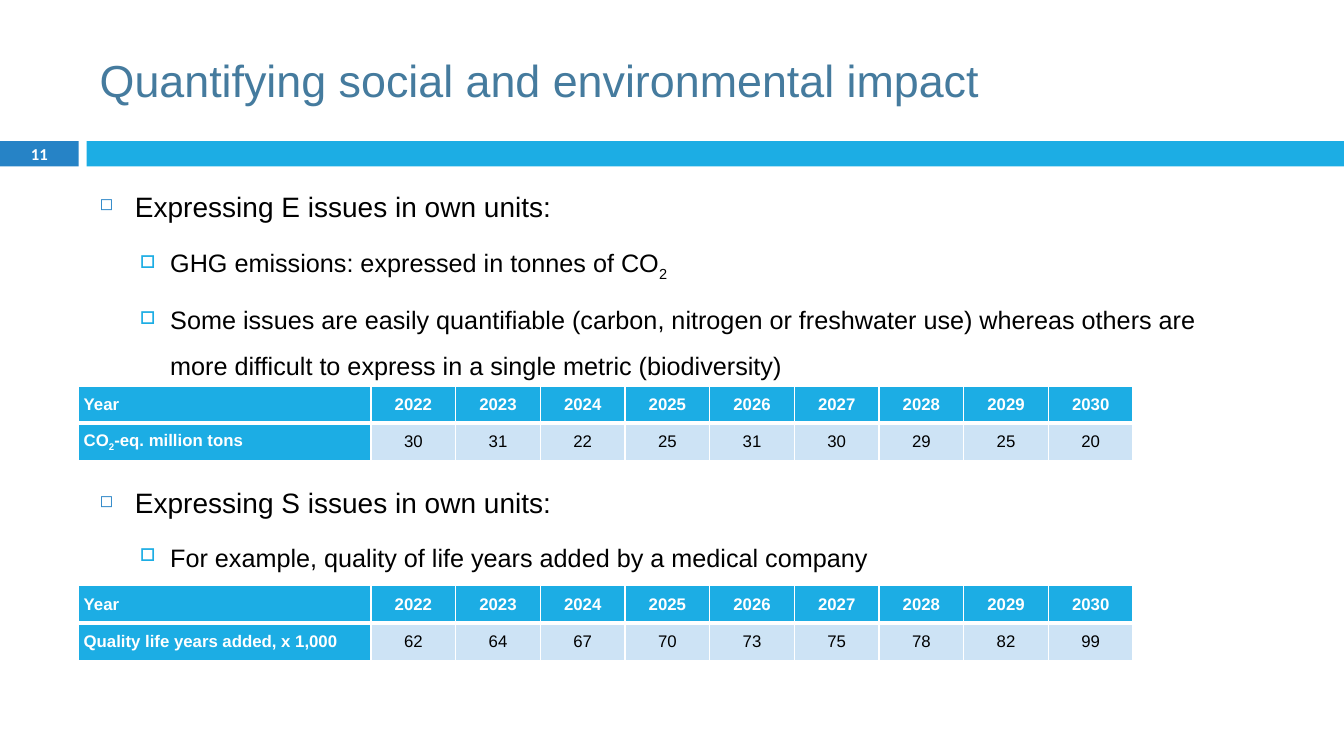
import pptx
import pptx.util
import pptx.dml.color
import pptx.enum.shapes
import pptx.enum.text
import pptx.oxml
import pptx.oxml.ns
import lxml.etree

Inches, Pt = pptx.util.Inches, pptx.util.Pt
RGB = pptx.dml.color.RGBColor.from_string
ALIGN = pptx.enum.text.PP_ALIGN
MIDDLE = pptx.enum.text.MSO_ANCHOR.MIDDLE
qn = pptx.oxml.ns.qn

THEME = {
    "font": "Arial", "number_font": "Calibri",
    "title": "457B9E", "text": "000000", "white": "FFFFFF",
    "accent": "1CADE4", "dark": "2683C6", "cell": "CDE3F5",
    "title_size": 32, "number_size": 11.9, "cell_size": 12,
}
# Per list level: size, space before, indent, hanging, bullet, its colour and percent
LEVELS = [
    (20, 7, 0.35, 0.35, "\u25fb", THEME["dark"], 60),
    (18, 5.5, 0.7, 0.3, "\u25a1", THEME["accent"], 70),
]


def add_run(p, text, size, color, bold=False, font=THEME["font"], sub=False):
    r = p.add_run()
    r.text = text
    r.font.size, r.font.bold, r.font.name = Pt(size), bold, font
    r.font.color.rgb = RGB(color)
    if sub:
        r.font._element.set("baseline", "-25000")


def add_box(left, top, width, height):
    tf = s.shapes.add_textbox(Inches(left), Inches(top), Inches(width), Inches(height)).text_frame
    tf.word_wrap = True
    return tf


prs = pptx.Presentation()
prs.slide_width, prs.slide_height = Inches(13.33), Inches(7.5)
s = prs.slides.add_slide(prs.slide_layouts[6])

# Header band
for left, width, color in [(0, 0.78, THEME["dark"]), (0.86, 12.47, THEME["accent"])]:
    sp = s.shapes.add_shape(pptx.enum.shapes.MSO_SHAPE.RECTANGLE,
                            Inches(left), Inches(1.4), Inches(width), Inches(0.25))
    sp.shadow.inherit = False
    sp.fill.solid()
    sp.fill.fore_color.rgb = RGB(color)
    sp.line.fill.background()

# Title and slide number
tf = add_box(0.89, 0.25, 11.89, 1.08)
tf.vertical_anchor = MIDDLE
add_run(tf.paragraphs[0], "Quantifying social and environmental impact",
        THEME["title_size"], THEME["title"])

tf = add_box(0, 1.39, 0.78, 0.27)
tf.vertical_anchor = MIDDLE
tf.paragraphs[0].alignment = ALIGN.CENTER
add_run(tf.paragraphs[0], "11", THEME["number_size"], THEME["white"], True, THEME["number_font"])

# Bulleted lists: top, height, then (level, text, subscript)
lists = [
    (1.66, 2.17, [
        (0, "Expressing E issues in own units:", ""),
        (1, "GHG emissions: expressed in tonnes of CO", "2"),
        (1, "Some issues are easily quantifiable (carbon, nitrogen or freshwater use) whereas "
            "others are more difficult to express in a single metric (biodiversity)", ""),
    ]),
    (4.6, 1.2, [
        (0, "Expressing S issues in own units:", ""),
        (1, "For example, quality of life years added by a medical company", ""),
    ]),
]
for top, height, items in lists:
    tf = add_box(0.89, top, 11.13, height)
    for i, (level, text, subscript) in enumerate(items):
        size, before, indent, hanging, bullet, color, percent = LEVELS[level]
        p = tf.add_paragraph() if i else tf.paragraphs[0]
        p.level, p.line_spacing, p.space_before = level, 1.5, Pt(before)
        pPr = p._p.get_or_add_pPr()
        pPr.set("marL", str(Inches(indent)))
        pPr.set("indent", str(-Inches(hanging)))
        clr = lxml.etree.SubElement(pPr, qn("a:buClr"))
        lxml.etree.SubElement(clr, qn("a:srgbClr"), val=color)
        lxml.etree.SubElement(pPr, qn("a:buSzPct"), val=str(percent * 1000))
        lxml.etree.SubElement(pPr, qn("a:buChar"), char=bullet)
        add_run(p, text, size, THEME["text"])
        if subscript:
            add_run(p, subscript, size, THEME["text"], sub=True)

# Yearly tables: top, label runs as (text, subscript), values
years = range(2022, 2031)
tables = [
    (3.83, [("CO", False), ("2", True), ("-eq. million tons", False)],
     [30, 31, 22, 25, 31, 30, 29, 25, 20]),
    (5.81, [("Quality life years added, x 1,000", False)],
     [62, 64, 67, 70, 73, 75, 78, 82, 99]),
]
for top, label, values in tables:
    rows = [[[("Year", False)]] + [[(str(y), False)] for y in years],
            [label] + [[(str(v), False)] for v in values]]
    table = s.shapes.add_table(2, 10, Inches(0.78), Inches(top), Inches(10.46), Inches(0.74)).table
    for c, col in enumerate(table.columns):
        col.width = Inches(0.84 if c else 2.9)
    for r, row in enumerate(rows):
        table.rows[r].height = Inches(0.37)
        for c, runs in enumerate(row):
            is_head = r == 0 or c == 0
            cell = table.cell(r, c)
            cell.vertical_anchor = MIDDLE
            cell.margin_left = cell.margin_right = Inches(0.05)
            cell.margin_top = cell.margin_bottom = 0
            p = cell.text_frame.paragraphs[0]
            p.alignment = ALIGN.CENTER if c else ALIGN.LEFT
            p.space_before = p.space_after = Pt(2)
            for text, sub in runs:
                add_run(p, text, THEME["cell_size"],
                        THEME["white"] if is_head else THEME["text"], is_head, sub=sub)
            # White borders, thicker between the two rows
            tcPr = cell._tc.get_or_add_tcPr()
            for side in ("lnL", "lnR", "lnT", "lnB"):
                thick = (r, side) in [(0, "lnB"), (1, "lnT")]
                ln = lxml.etree.SubElement(tcPr, qn("a:" + side), w=str(Pt(3 if thick else 1)))
                fill = lxml.etree.SubElement(ln, qn("a:solidFill"))
                lxml.etree.SubElement(fill, qn("a:srgbClr"), val=THEME["white"])
            cell.fill.solid()
            cell.fill.fore_color.rgb = RGB(THEME["accent"] if is_head else THEME["cell"])

prs.save("out.pptx")
